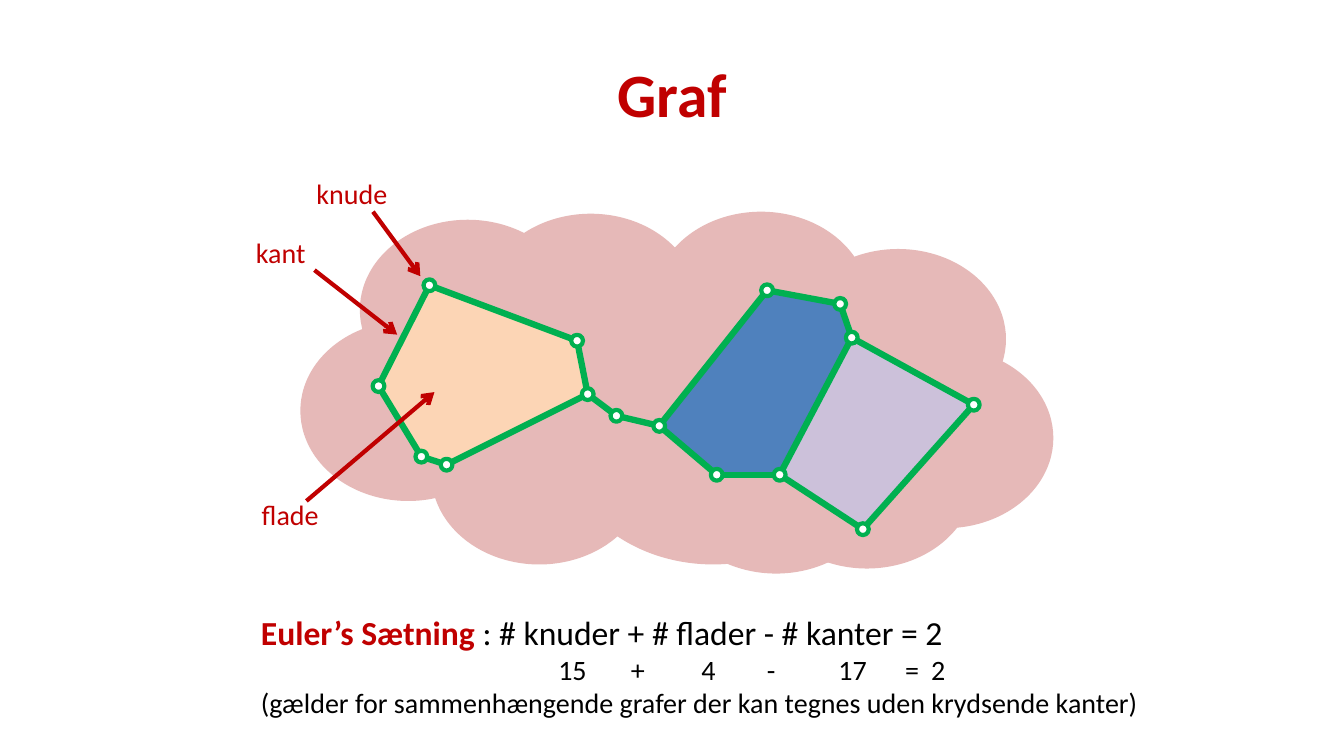
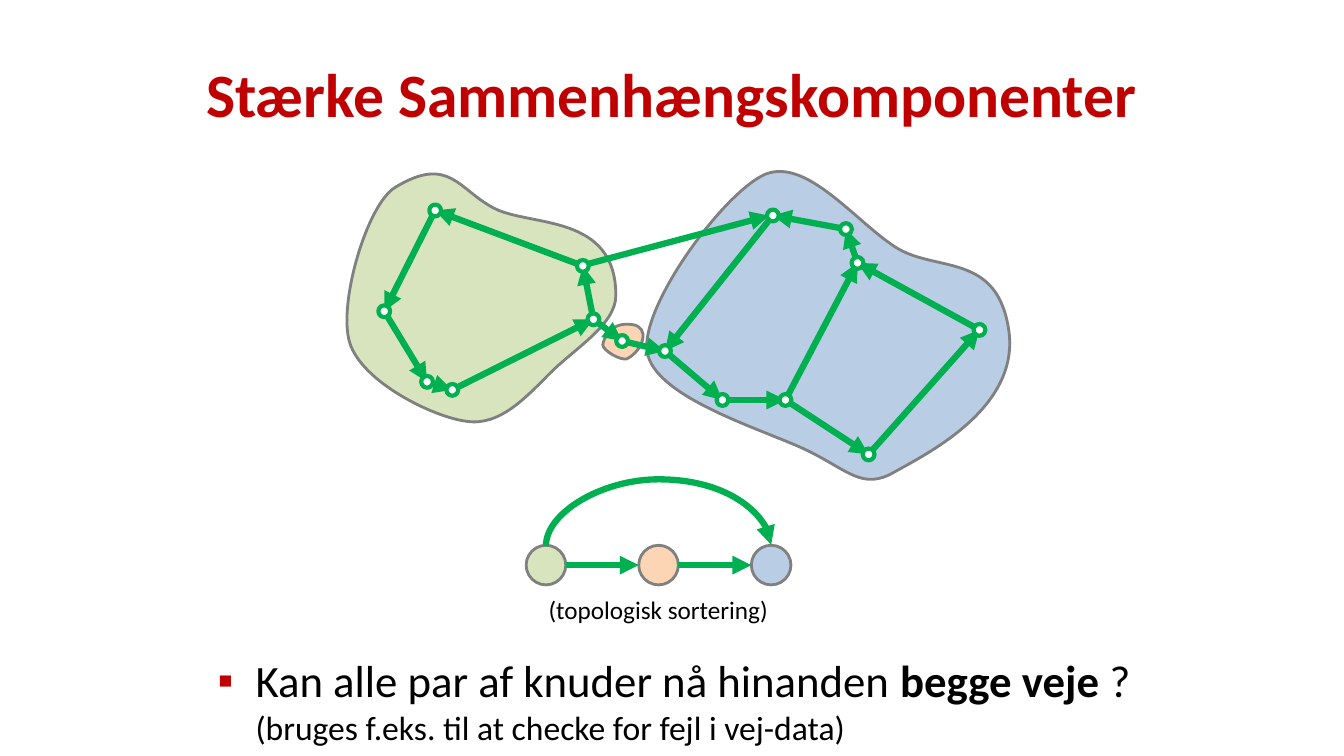
from lxml.etree import SubElement
from pptx import Presentation
from pptx.dml.color import RGBColor
from pptx.enum.shapes import MSO_CONNECTOR, MSO_SHAPE
from pptx.enum.text import MSO_ANCHOR, MSO_AUTO_SIZE, PP_ALIGN
from pptx.oxml.ns import qn
from pptx.util import Emu, Inches, Pt

CELL = Inches(0.1)
COLUMNS, ROWS = 133.33, 75
FONT = "Calibri"

RED = RGBColor(0xC0, 0x00, 0x00)
GREEN = RGBColor(0x00, 0xB0, 0x50)
BLACK = RGBColor(0x00, 0x00, 0x00)
WHITE = RGBColor(0xFF, 0xFF, 0xFF)
GREY = RGBColor(0x80, 0x80, 0x80)
ROSE = RGBColor(0xE6, 0xB9, 0xB8)
PEACH = RGBColor(0xFC, 0xD5, 0xB5)
BLUE = RGBColor(0x4F, 0x81, 0xBD)
LILAC = RGBColor(0xCC, 0xC1, 0xDA)
SAGE = RGBColor(0xD7, 0xE4, 0xBD)
SKY = RGBColor(0xB9, 0xCD, 0xE5)

EDGE_LINE = {"color": GREEN, "width": Pt(4.5)}
NODE_LINE = {"color": GREEN, "width": Pt(3)}
POINTER_LINE = {"color": RED, "width": Pt(3)}
COMPONENT_LINE = {"color": GREY, "width": Pt(2)}

NODE_SIZE = 1.17
NODES = {
    "a": (42.6, 28.3), "b": (57.25, 33.8), "c": (58.3, 39.1), "d": (44.3, 46.1),
    "e": (41.8, 45.3), "f": (37.55, 38.3), "g": (61.15, 41.25), "h": (65.4, 42.25),
    "i": (76.1, 28.8), "j": (83.35, 30.15), "k": (84.5, 33.5), "l": (96.6, 40.15),
    "m": (85.6, 52.5), "n": (77.35, 47.1), "o": (71.1, 47.1),
}
EDGES = "fe af ed dc ml nm lk kj nk on ho ih ji ba cb cg gh".split()
FACES = {"abcdef": PEACH, "hijkno": BLUE, "mlkn": LILAC}
COMPONENT_SHIFT = (0.57, -7.42)
CROSSING = ((57.9, 26.3), (76.3, 21.4))

PUFF_SIZE = (21.4, 17.9)
PUFFS = [(83.1, 34.5), (35.7, 21.8), (47.9, 21.2), (64.8, 21), (78.4, 24.7),
         (75.3, 38.5), (66.3, 39), (42.8, 38.1), (29.8, 31.8)]
CLOUD_CORE = (55.6, 30.7, 30.3, 25.3)

COMPONENTS = [
    (PEACH, (59.8, 32.1, 3.9, 3.5),
     [(62.7, 32.2), (60.5, 31.9), (59.9, 33.6), (59.8, 34.2),
      (59.8, 34.8), (61.6, 35.8), (62.2, 35.6),
      (63.9, 34.7), (64.5, 32.4), (62.7, 32.2)]),
    (SKY, (64.2, 17, 36, 30.6),
     [(88.8, 24.5), (84.8, 21.9), (80, 15.6), (75.9, 17.3),
      (71.8, 19.1), (63.5, 30.4), (64.2, 34.9),
      (64.9, 39.5), (76, 42.7), (80.1, 44.7),
      (84.2, 46.7), (85.6, 48.7), (88.8, 46.8),
      (92, 45), (101.1, 40.5), (100.1, 32.9),
      (99, 24.9), (92.8, 27.1), (88.8, 24.5)]),
    (SAGE, (34.5, 17.2, 26.6, 24.7),
     [(49.1, 20.7), (45.5, 18.9), (44.6, 15.3), (39.2, 18.6),
      (36.4, 20.3), (33.5, 30.2), (34.7, 34),
      (35.9, 37.9), (43, 41.4), (46.3, 41.8),
      (49.6, 42.3), (52.2, 39.4), (54.6, 37),
      (57.1, 34.5), (61.1, 32.2), (61.1, 29.3),
      (61.1, 21.2), (52.7, 22.5), (49.1, 20.7)]),
]

POINTERS = [
    ("knude", (30.4, 17, 10.2, 4.4), PP_ALIGN.LEFT, (37, 21), (41.7, 27.4)),
    ("kant", (23.6, 22.9, 7.7, 4.4), PP_ALIGN.RIGHT, (31.2, 26.8), (39.4, 33.2)),
    ("flade", (22.6, 48.9, 10, 4.4), PP_ALIGN.RIGHT, (30.4, 49.7), (43.1, 38.9)),
]

COUNT_TABS = (29.5, 36.7, 43.7, 50.2, 57.3, 63.9, 66.5)
SORT_ORDER = (SAGE, PEACH, SKY)
SORT_LEFT, SORT_TOP, SORT_SIZE, SORT_STEP = 52.2, 54.1, 3.93, 11.17
ARC_HEIGHT = 6.7


def cells(*lengths):
    """Turn grid columns and rows into slide lengths."""
    return [Emu(round(length * CELL)) for length in lengths]


def set_format(target, values):
    """Set each attribute of a font, line, paragraph or frame."""
    for name, value in values.items():
        if isinstance(value, RGBColor):
            getattr(target, name).rgb = value
        else:
            setattr(target, name, value)


def paint(shape, fill, line=None):
    """Give a shape a flat fill and an optional outline."""
    shape.shadow.inherit = False
    shape.fill.solid()
    shape.fill.fore_color.rgb = fill
    if line:
        set_format(shape.line, line)
    else:
        shape.line.fill.background()
    return shape


def add_oval(page, area, fill, line=None):
    """Draw an oval in an area of the grid."""
    return paint(page.shapes.add_shape(MSO_SHAPE.OVAL, *cells(*area)), fill, line)


def add_outline(page, points, fill, line=None):
    """Draw a closed outline through points of the grid."""
    corners = [cells(*point) for point in points]
    builder = page.shapes.build_freeform(*corners[0])
    builder.add_line_segments(corners[1:], close=True)
    return paint(builder.convert_to_shape(), fill, line)


def add_blob(page, area, controls, fill):
    """Draw a closed outline of cubic curves that fills an area."""
    left, top, width, height = area
    blob = add_outline(page, [(left, top), (left + width, top + height)], fill, COMPONENT_LINE)
    outline = next(blob.element.iter(qn("a:path")))
    for step in list(outline):
        outline.remove(step)
    chain = [("a:moveTo", controls[:1])]
    chain += [("a:cubicBezTo", controls[first:first + 3])
              for first in range(1, len(controls), 3)]
    for tag, points in chain:
        step = SubElement(outline, qn(tag))
        for column, row in points:
            x, y = cells(column - left, row - top)
            SubElement(step, qn("a:pt"), x=str(x), y=str(y))
    SubElement(outline, qn("a:close"))


def add_line(page, start, end, line, arrow=None, kind=MSO_CONNECTOR.STRAIGHT):
    """Draw a connector with an optional arrowhead at its end."""
    connector = page.shapes.add_connector(kind, *cells(*start, *end))
    set_format(connector.line, line)
    properties = connector.element.spPr
    if arrow:
        SubElement(properties.find(qn("a:ln")), qn("a:tailEnd"), type=arrow)
    SubElement(properties, qn("a:effectLst"))
    return connector


def add_arc(page, first, last):
    """Arch a curved arrow from the top of one circle to another."""
    connector = add_line(page, (0, 0), (1, 1), EDGE_LINE, "triangle", MSO_CONNECTOR.CURVE)
    connector.begin_connect(first, 0)
    connector.end_connect(last, 0)
    thickness = cells(0.1)[0]
    span = last.left - first.left
    middle = first.left + first.width // 2 + span // 2
    set_format(connector, {
        "left": Emu(middle - thickness // 2), "top": Emu(first.top - span // 2),
        "width": thickness, "height": Emu(span)})
    properties = connector.element.spPr
    for name, value in {"rot": "5400000", "flipH": "1", "flipV": "1"}.items():
        properties.xfrm.set(name, value)
    geometry = properties.find(qn("a:prstGeom"))
    values = geometry.find(qn("a:avLst"))
    if values is None:
        values = SubElement(geometry, qn("a:avLst"))
    reach = round(ARC_HEIGHT / 0.1 * 100000)
    SubElement(values, qn("a:gd"), name="adj1", fmla=f"val {reach}")


def write(para, spans):
    """Add formatted spans to a paragraph, with breaks between lines."""
    for text, size, color, bold in spans:
        if text == "\n":
            para.add_line_break()
            continue
        span = para.add_run()
        span.text = text
        set_format(span.font, {"name": FONT, "size": Pt(size), "color": color, "bold": bold})


def add_text(page, area, paragraphs, align=PP_ALIGN.LEFT):
    """Add a wrapped text box and return its paragraphs."""
    frame = page.shapes.add_textbox(*cells(*area)).text_frame
    set_format(frame, {"word_wrap": True, "auto_size": MSO_AUTO_SIZE.SHAPE_TO_FIT_TEXT})
    for index, spans in enumerate(paragraphs):
        para = frame.add_paragraph() if index else frame.paragraphs[0]
        para.alignment = align
        write(para, spans)
    return frame.paragraphs


def place(holder, area, anchor):
    """Move a placeholder and return its first paragraph."""
    set_format(holder, dict(zip(("left", "top", "width", "height"), cells(*area))))
    set_format(holder.text_frame, {
        "vertical_anchor": anchor, "word_wrap": True, "auto_size": MSO_AUTO_SIZE.NONE})
    return holder.text_frame.paragraphs[0]


def add_page(deck, layout, title, width):
    """Add a slide with a centred red title."""
    page = deck.slides.add_slide(deck.slide_layouts[layout])
    area = ((COLUMNS - width) / 2, 3, width, 12.5)
    para = place(page.shapes.title, area, MSO_ANCHOR.MIDDLE)
    para.alignment = PP_ALIGN.CENTER
    write(para, [(title, 44, RED, True)])
    return page


def shift_nodes(shift):
    """Move the whole graph by columns and rows."""
    return {name: (x + shift[0], y + shift[1]) for name, (x, y) in NODES.items()}


def add_graph(page, nodes, arrow=None):
    """Draw the edges and then the nodes of the graph."""
    for start, end in EDGES:
        add_line(page, nodes[start], nodes[end], EDGE_LINE, arrow)
    for x, y in nodes.values():
        area = (x - NODE_SIZE / 2, y - NODE_SIZE / 2, NODE_SIZE, NODE_SIZE)
        add_oval(page, area, WHITE, NODE_LINE)


def set_tabs(para, stops):
    """Give a paragraph left tab stops."""
    tabs = SubElement(para._p.get_or_add_pPr(), qn("a:tabLst"))
    for stop in cells(*stops):
        SubElement(tabs, qn("a:tab"), pos=str(stop), algn="l")


def set_bullet(para, indent):
    """Give a paragraph a red square bullet and a hanging indent."""
    properties = para._p.get_or_add_pPr()
    hang = cells(indent)[0]
    properties.set("marL", str(hang))
    properties.set("indent", str(-hang))
    color = SubElement(properties, qn("a:buClr"))
    SubElement(color, qn("a:srgbClr"), val=str(RED))
    SubElement(properties, qn("a:buChar"), char="▪")


def add_graph_page(deck):
    """Build the slide on nodes, edges and faces."""
    page = add_page(deck, 5, "Graf", 120)
    for area in [(*corner, *PUFF_SIZE) for corner in PUFFS] + [CLOUD_CORE]:
        add_oval(page, area, ROSE)
    for names, fill in FACES.items():
        add_outline(page, [NODES[name] for name in names], fill)
    add_graph(page, NODES)
    paragraphs = add_text(page, (24.9, 60.2, 92.6, 11.8), [
        [("Euler’s Sætning ", 24, RED, True),
         (": # knuder + # flader - # kanter = 2", 24, BLACK, False)],
        [("\t15\t+\t4\t-\t17\t=\t2", 20, BLACK, False),
         ("\n", 20, BLACK, False),
         ("(gælder for sammenhængende grafer der kan tegnes uden krydsende kanter)",
          20, BLACK, False)]])
    set_tabs(paragraphs[1], COUNT_TABS)
    for label, area, align, start, end in POINTERS:
        add_line(page, start, end, POINTER_LINE, "arrow")
        add_text(page, area, [[(label, 20, RED, False)]], align)


def add_sorting(page):
    """Draw the components in topological order."""
    lefts = [SORT_LEFT + SORT_STEP * index for index in range(len(SORT_ORDER))]
    circles = [add_oval(page, (left, SORT_TOP, SORT_SIZE, SORT_SIZE), fill, COMPONENT_LINE)
               for left, fill in zip(lefts, SORT_ORDER)]
    middle = SORT_TOP + SORT_SIZE / 2
    for left, following in zip(lefts, lefts[1:]):
        add_line(page, (left + SORT_SIZE, middle), (following, middle), EDGE_LINE, "triangle")
    add_arc(page, circles[0], circles[-1])
    add_text(page, (52.2, 58.5, 26.2, 4),
             [[("(topologisk sortering)", 18, BLACK, False)]], PP_ALIGN.CENTER)


def add_component_page(deck):
    """Build the slide on strongly connected components."""
    page = add_page(deck, 1, "Stærke Sammenhængskomponenter", 100)
    for fill, area, controls in COMPONENTS:
        add_blob(page, area, controls, fill)
    add_line(page, *CROSSING, EDGE_LINE, "triangle")
    add_graph(page, shift_nodes(COMPONENT_SHIFT), "triangle")
    add_sorting(page)
    para = place(page.placeholders[1], (20.6, 64.3, 92.7, 10.6), MSO_ANCHOR.TOP)
    set_bullet(para, 3.75)
    write(para, [
        ("Kan alle par af knuder nå hinanden ", 32, BLACK, False),
        ("begge veje ", 32, BLACK, True),
        ("?", 32, BLACK, False),
        ("\n", 32, BLACK, False),
        ("(bruges f.eks. til at checke for fejl i vej-data)", 24, BLACK, False)])


def main():
    """Build and save the deck."""
    deck = Presentation()
    deck.slide_width, deck.slide_height = cells(COLUMNS, ROWS)
    add_graph_page(deck)
    add_component_page(deck)
    deck.save("out.pptx")


if __name__ == "__main__":
    main()
